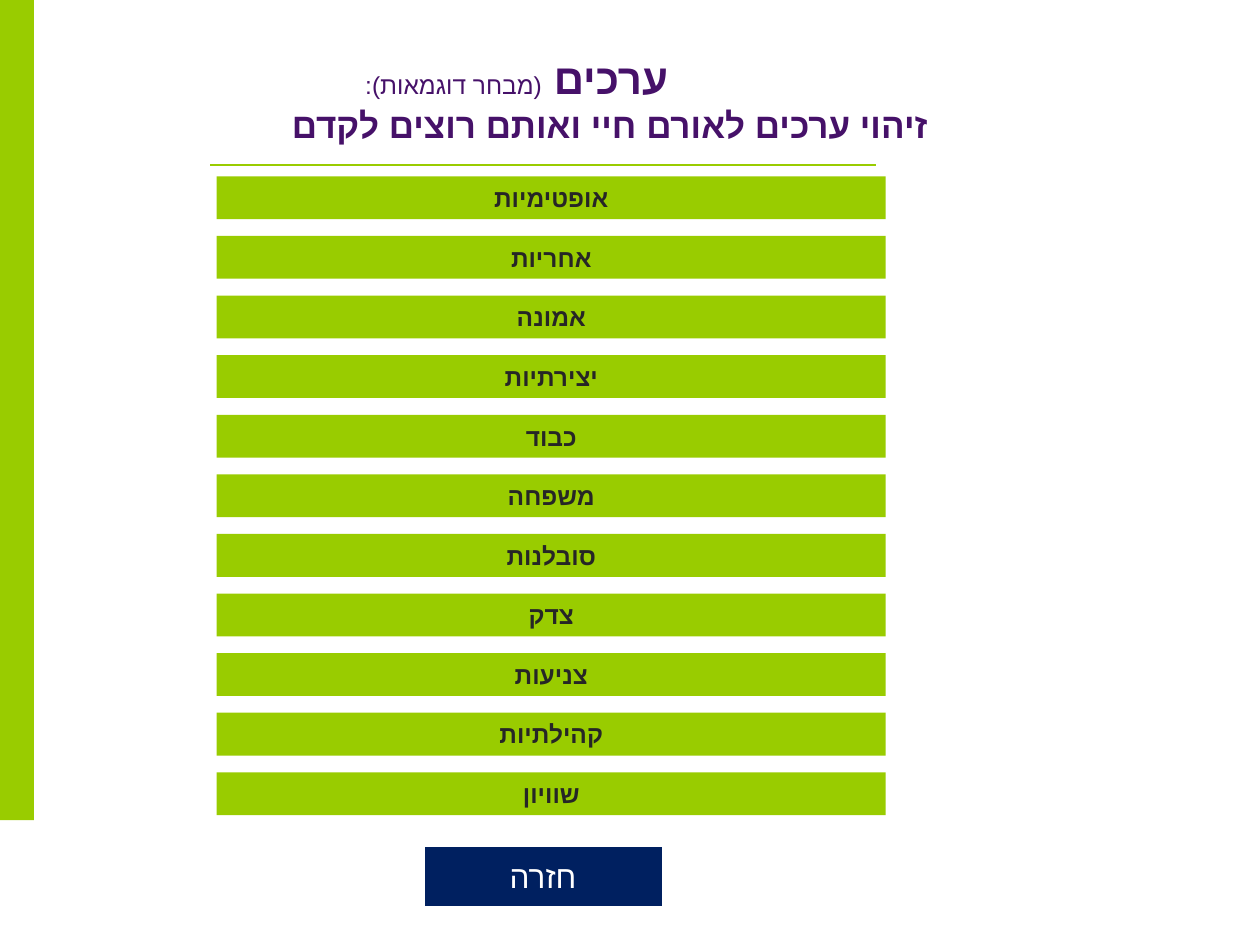
from pptx import Presentation, util as u
from pptx.dml.color import RGBColor
from pptx.enum import shapes, text
from pptx.oxml.ns import qn
from lxml import etree

COLORS = {"green": "99CC00", "purple": "461169", "dark": "262626",
          "navy": "002060", "white": "FFFFFF"}
VALUES = ["אופטימיות", "אחריות", "אמונה", "יצירתיות", "כבוד", "משפחה",
          "סובלנות", "צדק", "צניעות", "קהילתיות", "שוויון"]


class SlideBuilder:
    font = "Arial"

    def __init__(self, slide):
        self.slide = slide

    def color(self, name):
        return RGBColor.from_string(COLORS[name])

    def paragraph(self, paragraph, runs, color, indent=0):
        """Write a centred right-to-left paragraph from (text, size, bold) runs."""
        paragraph.alignment = text.PP_ALIGN.CENTER
        properties = paragraph._p.get_or_add_pPr()
        properties.set("rtl", "1")
        if indent:
            properties.set("marL", str(u.Inches(indent)))
        for words, size, bold in runs:
            run = paragraph.add_run()
            run.text = words
            run.font.name = self.font
            run.font.size = u.Pt(size)
            run.font.bold = bold
            run.font.color.rgb = self.color(color)
            script_font = etree.SubElement(run._r.get_or_add_rPr(), qn("a:cs"))
            script_font.set("typeface", self.font)

    def box(self, left, top, width, height, fill, runs=(), color="dark",
            kind=shapes.MSO_SHAPE.RECTANGLE):
        shape = self.slide.shapes.add_shape(
            kind, *map(u.Inches, (left, top, width, height)))
        shape.shadow.inherit = False
        shape.fill.solid()
        shape.fill.fore_color.rgb = self.color(fill)
        shape.line.fill.background()
        if runs:
            frame = shape.text_frame
            frame.word_wrap = True
            frame.vertical_anchor = text.MSO_ANCHOR.MIDDLE
            self.paragraph(frame.paragraphs[0], runs, color)

    def rule(self, left, right, y, color):
        line = self.slide.shapes.add_connector(
            shapes.MSO_CONNECTOR.STRAIGHT,
            *map(u.Inches, (left, y, right, y)))
        line.line.color.rgb = self.color(color)
        line.line.width = u.Pt(0.75)
        etree.SubElement(line._element.spPr, qn("a:effectLst"))

    def title(self, left, top, width, height, lines, color):
        """Write a title from (runs, indent) lines."""
        frame = self.slide.shapes.add_textbox(
            *map(u.Inches, (left, top, width, height))).text_frame
        frame.word_wrap = True
        frame.auto_size = text.MSO_AUTO_SIZE.SHAPE_TO_FIT_TEXT
        frame.vertical_anchor = text.MSO_ANCHOR.MIDDLE
        for index, (runs, indent) in enumerate(lines):
            paragraph = frame.add_paragraph() if index else frame.paragraphs[0]
            self.paragraph(paragraph, runs, color, indent)


def main():
    presentation = Presentation()
    presentation.slide_width = u.Inches(10)
    presentation.slide_height = u.Inches(7.5)
    builder = SlideBuilder(
        presentation.slides.add_slide(presentation.slide_layouts[6]))

    # Side band and rule under the title
    builder.box(0, 0, 0.27, 6.51, "green")
    builder.rule(1.67, 6.95, 1.31, "green")

    # Title
    builder.title(1.14, 0.37, 7.4, 0.83, [
        ([("ערכים ", 24, True), ("(מבחר דוגמאות):", 14, False)], 1.48),
        ([("זיהוי ערכים לאורם חיי ואותם רוצים לקדם", 20, True)], 0),
    ], "purple")

    # Evenly spaced value bars
    first, last = 1.4, 6.13
    step = (last - first) / (len(VALUES) - 1)
    for index, value in enumerate(VALUES):
        builder.box(1.72, first + index * step, 5.31, 0.34, "green",
                    [(value, 14, True)])

    # Back button
    builder.box(3.37, 6.72, 1.88, 0.47, "navy", [("חזרה", 18, False)], "white",
                shapes.MSO_SHAPE.ACTION_BUTTON_CUSTOM)

    presentation.save("out.pptx")


if __name__ == "__main__":
    main()
